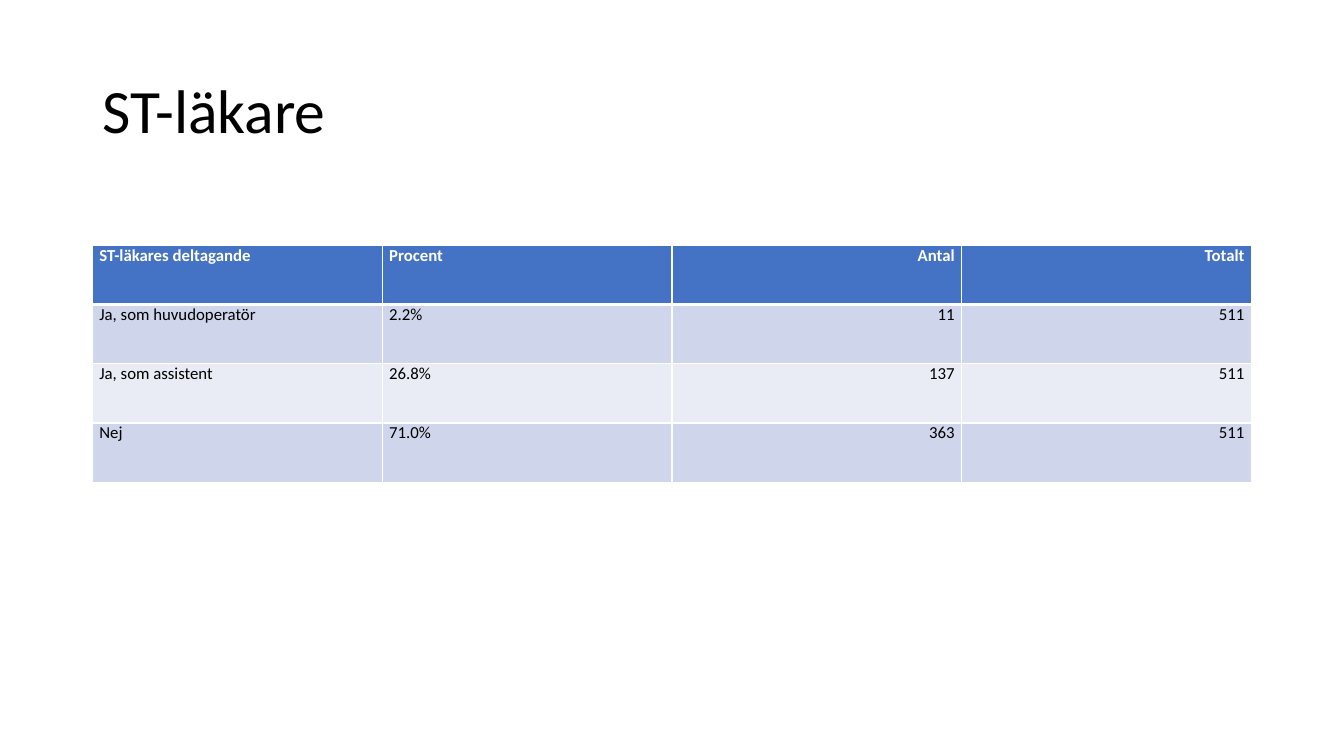
"""Build a slide with a table of ST-läkare participation."""
from lxml import etree
from pptx import Presentation
from pptx.dml.color import RGBColor
from pptx.enum.text import MSO_ANCHOR, PP_ALIGN
from pptx.oxml.ns import qn
from pptx.util import Pt

TITLE = "ST-läkare"
ROWS = [
    ("ST-läkares deltagande", "Procent", "Antal", "Totalt"),
    ("Ja, som huvudoperatör", "2.2%", "11", "511"),
    ("Ja, som assistent", "26.8%", "137", "511"),
    ("Nej", "71.0%", "363", "511"),
]
LEFT, RIGHT = PP_ALIGN.LEFT, PP_ALIGN.RIGHT
ALIGNS = (LEFT, LEFT, RIGHT, RIGHT)
MIDDLE, TOP = MSO_ANCHOR.MIDDLE, MSO_ANCHOR.TOP

WHITE = RGBColor(0xFF, 0xFF, 0xFF)
BLACK = RGBColor(0x00, 0x00, 0x00)
BLUE = RGBColor(0x44, 0x72, 0xC4)
BAND_DARK = RGBColor(0xCF, 0xD5, 0xEA)
BAND_LIGHT = RGBColor(0xE9, 0xEB, 0xF5)

MARGIN, WIDTH = 66, 828
TITLE_TOP, TITLE_HEIGHT = 28.75, 104.38
TABLE_TOP, ROW_HEIGHT = 175.25, 42.3
THIN, THICK = 1, 3

TITLE_FONT = {"name": "Calibri", "size": Pt(44)}
CELL_FONT = {"name": "Calibri", "size": Pt(12)}
CELL_FORMAT = {"margin_left": Pt(5), "margin_right": Pt(5), "margin_top": 0,
               "margin_bottom": 0, "vertical_anchor": TOP}


def apply(target, values):
    for name, value in values.items():
        setattr(target, name, value)


def write(p, text, color, font):
    r = p.add_run()
    r.text = text
    apply(r.font, font)
    r.font.color.rgb = color


def add_borders(cell, widths):
    tcPr = cell._tc.get_or_add_tcPr()
    for side, width in widths.items():
        ln = etree.SubElement(tcPr, qn(f"a:ln{side}"), w=str(Pt(width)))
        fill = etree.SubElement(ln, qn("a:solidFill"))
        etree.SubElement(fill, qn("a:srgbClr"), val=str(WHITE))


def add_title(s):
    box = s.shapes.add_textbox(Pt(MARGIN), Pt(TITLE_TOP), Pt(WIDTH), Pt(TITLE_HEIGHT))
    tf = box.text_frame
    apply(tf, {"word_wrap": True, "vertical_anchor": MIDDLE})
    p = tf.paragraphs[0]
    p.line_spacing = 0.9
    write(p, TITLE, BLACK, TITLE_FONT)


def add_participation_table(s):
    table = s.shapes.add_table(len(ROWS), len(ALIGNS), Pt(MARGIN), Pt(TABLE_TOP),
                               Pt(WIDTH), Pt(ROW_HEIGHT * len(ROWS))).table
    for i, row in enumerate(ROWS):
        header = i == 0
        fill = BLUE if header else BAND_DARK if i % 2 else BAND_LIGHT
        widths = {"L": THIN, "R": THIN, "T": THICK if i == 1 else THIN,
                  "B": THICK if header else THIN}
        for j, (text, align) in enumerate(zip(row, ALIGNS)):
            cell = table.cell(i, j)
            apply(cell, CELL_FORMAT)
            add_borders(cell, widths)
            cell.fill.solid()
            cell.fill.fore_color.rgb = fill
            p = cell.text_frame.paragraphs[0]
            apply(p, {"alignment": align, "space_after": Pt(1.8)})
            write(p, text, WHITE if header else BLACK, {**CELL_FONT, "bold": header})


def main():
    prs = Presentation()
    apply(prs, {"slide_width": Pt(960), "slide_height": Pt(540)})
    s = prs.slides.add_slide(prs.slide_layouts[6])
    add_title(s)
    add_participation_table(s)
    prs.save("out.pptx")


if __name__ == "__main__":
    main()
